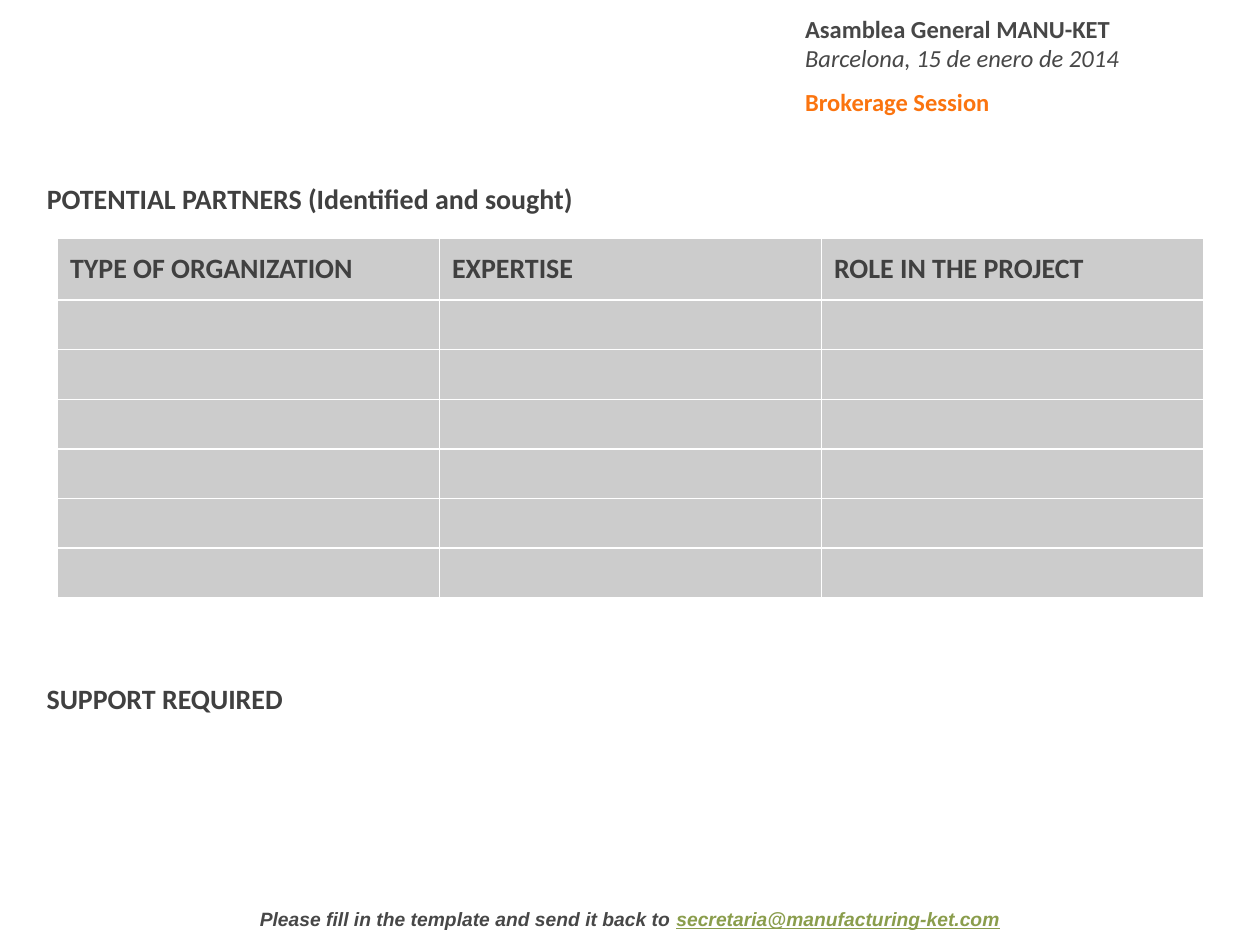
from lxml.etree import SubElement
from pptx import Presentation
from pptx.dml.color import RGBColor
from pptx.enum.text import MSO_ANCHOR, MSO_AUTO_SIZE, PP_ALIGN
from pptx.oxml.ns import qn
from pptx.util import Cm, Pt

DARK, GREY, ORANGE, GREEN, CELL = "404040", "474747", "FB740F", "8A9D4C", "CCCCCC"

EVENT_LINES = [
    ("Asamblea General MANU-KET", GREY, True, False, 0),
    ("Barcelona, 15 de enero de 2014", GREY, False, True, 0),
    ("Brokerage Session", ORANGE, True, False, 8.5),
]
PARTNERS_HEADING = "POTENTIAL PARTNERS (Identified and sought)"
SUPPORT_HEADING = "SUPPORT REQUIRED"
COLUMNS = ["TYPE OF ORGANIZATION", "EXPERTISE", "ROLE IN THE PROJECT"]
EMPTY_ROWS = 6
FOOTER_RUNS = [
    ("Please fill in the template and send it back to ", GREY, False),
    ("secretaria@manufacturing-ket.com", GREEN, True),
]

HEADING_LEFT, HEADING_WIDTH = 0.69, 24.1
COLUMN_WIDTH, HEADER_HEIGHT, ROW_HEIGHT = 7.7, 1.25, 1


def color(hex_value):
    return RGBColor.from_string(hex_value)


def format_run(run, size, hex_value, bold=True, italic=False, name="Calibri"):
    font = run.font
    font.name, font.size = name, Pt(size)
    font.bold, font.italic = bold, italic
    font.color.rgb = color(hex_value)


def place(shape, left, top, width, height):
    shape.left, shape.top = Cm(left), Cm(top)
    shape.width, shape.height = Cm(width), Cm(height)
    text_frame = shape.text_frame
    text_frame.word_wrap = True
    text_frame.auto_size = MSO_AUTO_SIZE.NONE
    text_frame.vertical_anchor = MSO_ANCHOR.TOP
    return text_frame


def add_text_box(slide, left, top, width, height):
    return place(slide.shapes.add_textbox(0, 0, 0, 0), left, top, width, height)


def write_heading(text_frame, text):
    text_frame.text = text
    paragraph = text_frame.paragraphs[0]
    paragraph.alignment = PP_ALIGN.LEFT
    format_run(paragraph.runs[0], 16, DARK)


def add_event(slide):
    text_frame = add_text_box(slide, 15.98, 0.15, 9.42, 2.36)
    text_frame.text = "\n".join(line[0] for line in EVENT_LINES)
    for paragraph, line in zip(text_frame.paragraphs, EVENT_LINES):
        _, hex_value, bold, italic, gap = line
        if gap:
            paragraph.space_before = Pt(gap)
        format_run(paragraph.runs[0], 14, hex_value, bold, italic)


def add_footer(slide):
    paragraph = add_text_box(slide, 0, 18.16, 25.4, 0.74).paragraphs[0]
    paragraph.alignment = PP_ALIGN.CENTER
    for text, hex_value, underlined in FOOTER_RUNS:
        run = paragraph.add_run()
        run.text = text
        format_run(run, 11, hex_value, italic=True, name="Arial")
        run.font.underline = underlined


def add_partner_table(slide):
    table = slide.shapes.add_table(
        EMPTY_ROWS + 1, len(COLUMNS), Cm(1.16), Cm(4.8),
        Cm(COLUMN_WIDTH * len(COLUMNS)), Cm(HEADER_HEIGHT + ROW_HEIGHT * EMPTY_ROWS),
    ).table
    for column in table.columns:
        column.width = Cm(COLUMN_WIDTH)
    for index, row in enumerate(table.rows):
        row.height = Cm(ROW_HEIGHT if index else HEADER_HEIGHT)
        for cell, title in zip(row.cells, COLUMNS):
            cell.fill.solid()
            cell.fill.fore_color.rgb = color(CELL)
            if index == 0:
                cell.vertical_anchor = MSO_ANCHOR.MIDDLE
                write_heading(cell.text_frame, title)
            else:
                paragraph = cell.text_frame.paragraphs[0]
                SubElement(paragraph._p, qn("a:endParaRPr"), sz="1600")


def main():
    presentation = Presentation()
    presentation.slide_width, presentation.slide_height = Cm(25.4), Cm(19.05)
    slide = presentation.slides.add_slide(presentation.slide_layouts[5])
    add_event(slide)
    add_footer(slide)
    title_frame = place(slide.shapes.title, HEADING_LEFT, 3.53, HEADING_WIDTH, 0.94)
    write_heading(title_frame, PARTNERS_HEADING)
    add_partner_table(slide)
    support_frame = add_text_box(slide, HEADING_LEFT, 13.61, HEADING_WIDTH, 2.31)
    write_heading(support_frame, SUPPORT_HEADING)
    presentation.save("out.pptx")


if __name__ == "__main__":
    main()
